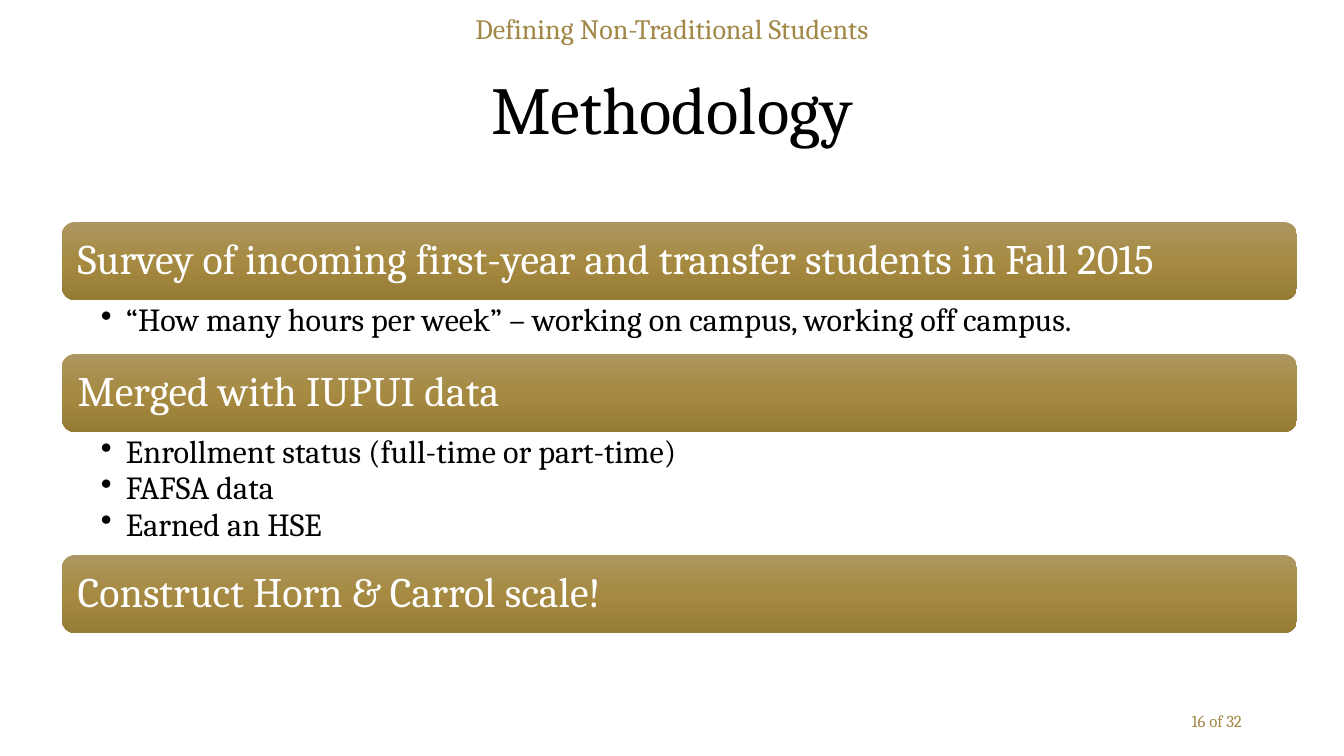
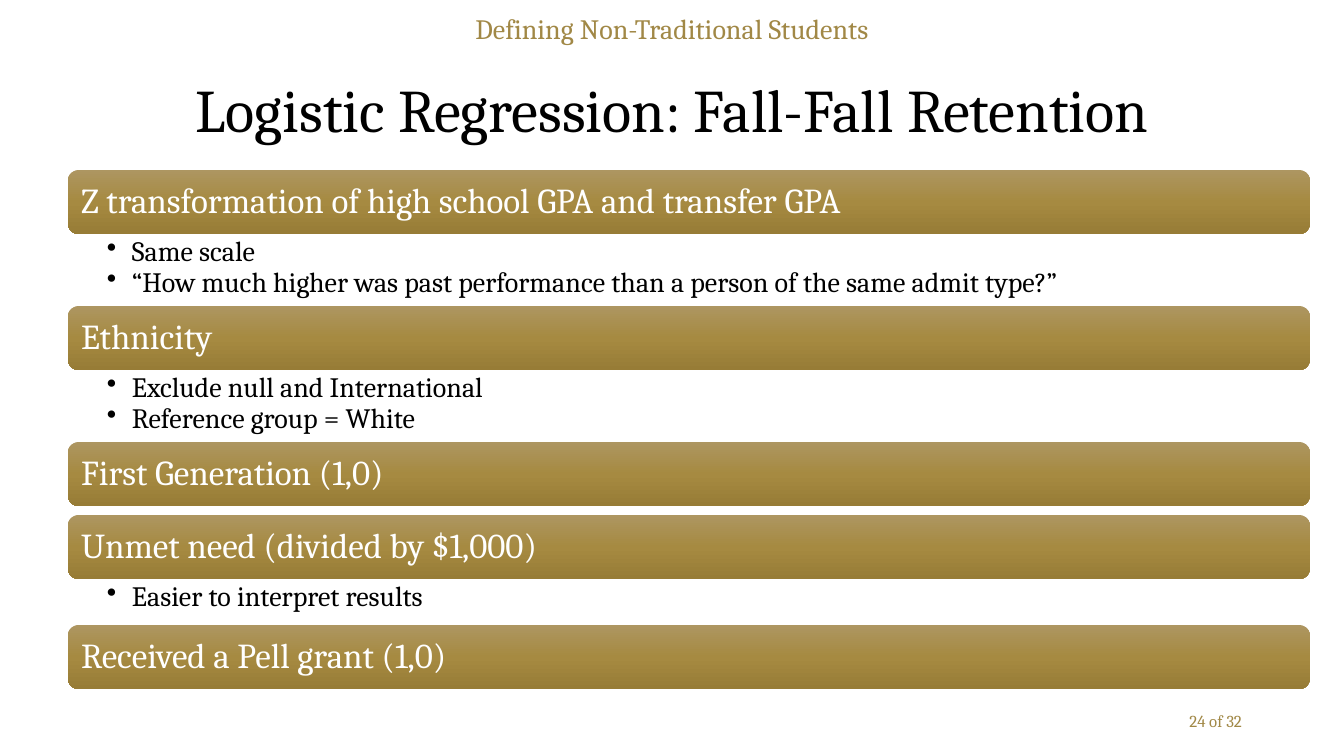
from copy import deepcopy
from dataclasses import dataclass

from lxml.etree import SubElement
from pptx import Presentation
from pptx.dml.color import RGBColor
from pptx.enum.shapes import MSO_SHAPE
from pptx.enum.text import MSO_ANCHOR, PP_ALIGN
from pptx.oxml.ns import qn
from pptx.util import Emu, Pt


@dataclass(frozen=True)
class Theme:
    font: str = "Cambria"
    ink: str = "000000"
    gold: str = "A18846"
    white: str = "FFFFFF"
    gradient: tuple = ((0, "AD9661"), (0.5, "A68A41"), (1, "977C36"))
    running_size: int = 20
    footer_size: int = 12
    line_spacing: float = 0.9
    tight_spacing: float = 0.8
    bullet_gap: int = 1


theme = Theme()


def px(length):
    return Emu(round(length * 914400 / 100.8))


def write(shape, lines, size, color, insets=(10, 5, 10, 5), align=PP_ALIGN.LEFT,
          anchor=MSO_ANCHOR.MIDDLE, spacing=theme.line_spacing, bulleted=False):
    frame = shape.text_frame
    frame.word_wrap = True
    frame.vertical_anchor = anchor
    frame.margin_left, frame.margin_top, frame.margin_right, frame.margin_bottom = map(px, insets)
    frame.text = "\n".join(lines)
    for paragraph in frame.paragraphs:
        paragraph.alignment = align
        paragraph.line_spacing = spacing
        if bulleted:
            paragraph.space_after = Pt(theme.bullet_gap)
            properties = paragraph._p.get_or_add_pPr()
            properties.set("marL", str(px(25)))
            properties.set("indent", str(-px(25)))
            SubElement(properties, qn("a:buChar"), char="•")
        paragraph.font.name = theme.font
        paragraph.font.size = Pt(size)
        paragraph.font.color.rgb = RGBColor.from_string(color)


slides = [
    {
        "title": "Methodology", "title_size": 48, "page": 16,
        "left": 62, "top": 222, "width": 1235, "bar_height": 78,
        "bar_size": 30, "bar_inset": 12, "list_size": 23, "list_insets": (39, 4, 23, 4),
        "sections": [
            ("Survey of incoming first-year and transfer students in Fall 2015", 54,
             ["“How many hours per week” – working on campus, working off campus."]),
            ("Merged with IUPUI data", 123,
             ["Enrollment status (full-time or part-time)", "FAFSA data", "Earned an HSE"]),
            ("Construct Horn & Carrol scale!", 0, []),
        ],
    },
    {
        "title": "Logistic Regression: Fall-Fall Retention", "title_size": 43.2, "page": 24,
        "left": 68, "top": 170, "width": 1242, "bar_height": 64,
        "bar_size": 25, "bar_inset": 10, "list_size": 20, "list_insets": (39, 3, 19, 3),
        "sections": [
            ("Z transformation of high school GPA and transfer GPA", 72,
             ["Same scale",
              "“How much higher was past performance than a person of the same admit type?”"]),
            ("Ethnicity", 72, ["Exclude null and International", "Reference group = White"]),
            ("First Generation (1,0)", 9, []),
            ("Unmet need (divided by $1,000)", 46, ["Easier to interpret results"]),
            ("Received a Pell grant (1,0)", 0, []),
        ],
    },
]

presentation = Presentation()
presentation.slide_width = px(1344)
presentation.slide_height = px(756)

for content in slides:
    slide = presentation.slides.add_slide(presentation.slide_layouts[6])
    shapes = slide.shapes

    title = shapes.add_textbox(px(92), px(40), px(1160), px(146))
    write(title, [content["title"]], content["title_size"], theme.ink, align=PP_ALIGN.CENTER)

    footer = shapes.add_textbox(px(950), px(701), px(302), px(40))
    write(footer, [f"{content['page']} of 32"], theme.footer_size, theme.gold,
          align=PP_ALIGN.RIGHT, spacing=1.0)

    running_title = shapes.add_textbox(px(0), px(13), px(1344), px(40))
    write(running_title, ["Defining Non-Traditional Students"], theme.running_size, theme.gold,
          align=PP_ALIGN.CENTER, anchor=MSO_ANCHOR.TOP, spacing=theme.tight_spacing)

    left, top, width = px(content["left"]), content["top"], px(content["width"])
    for heading, list_height, bullets in content["sections"]:
        bar = shapes.add_shape(MSO_SHAPE.ROUNDED_RECTANGLE, left, px(top), width,
                               px(content["bar_height"]))
        bar.shadow.inherit = False
        bar.line.fill.background()
        bar.fill.gradient()
        bar.fill.gradient_angle = 270
        stop_list = next(bar._element.iter(qn("a:gsLst")))
        stop_list.append(deepcopy(stop_list[0]))
        for stop, (position, color) in zip(bar.fill.gradient_stops, theme.gradient):
            stop.position = position
            stop.color.rgb = RGBColor.from_string(color)
        write(bar, [heading], content["bar_size"], theme.white,
              insets=(content["bar_inset"],) * 4)
        top += content["bar_height"]

        if bullets:
            bullet_list = shapes.add_textbox(left, px(top), width, px(list_height))
            write(bullet_list, bullets, content["list_size"], theme.ink,
                  insets=content["list_insets"], anchor=MSO_ANCHOR.TOP, bulleted=True)
        top += list_height

presentation.save("out.pptx")
